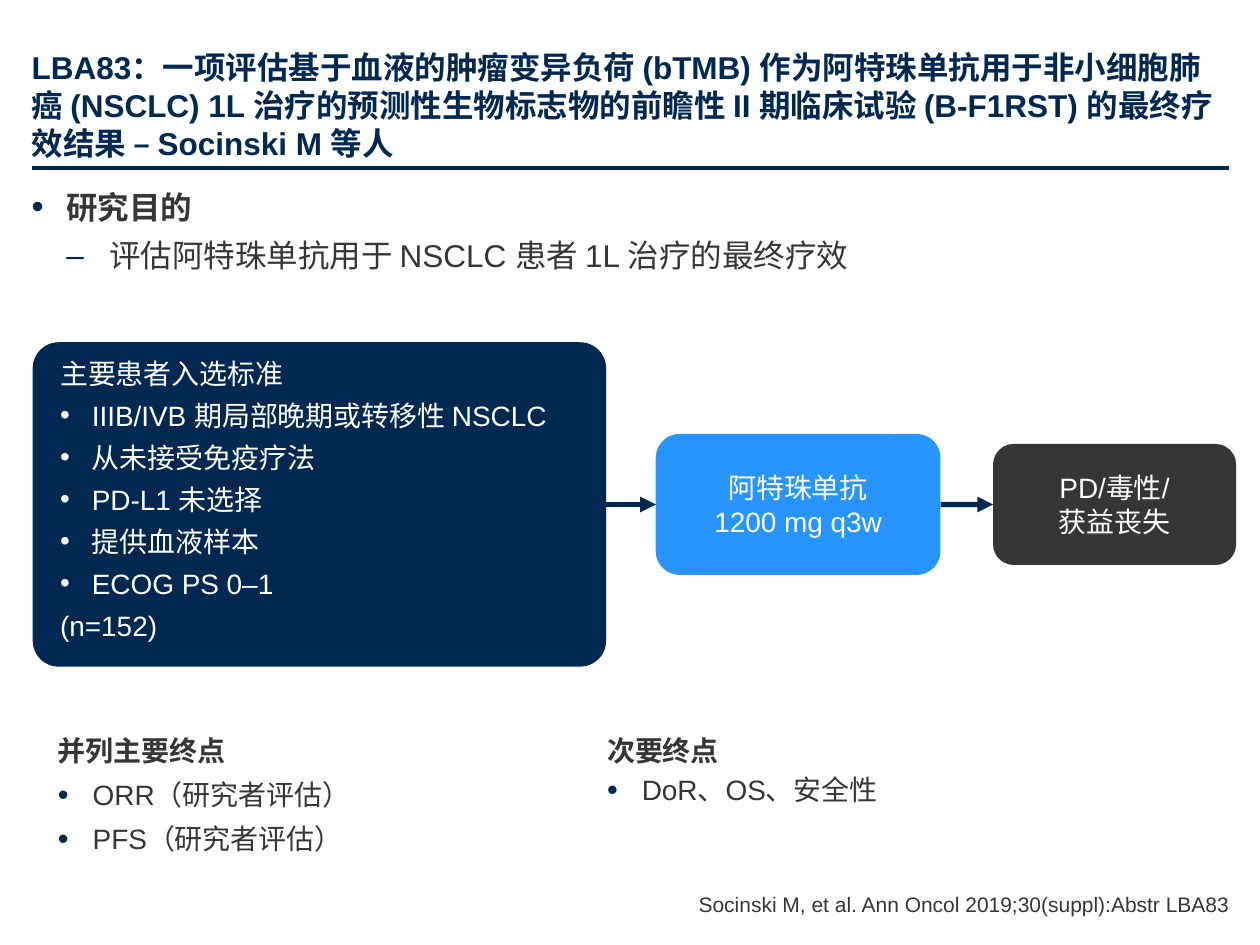
from lxml.etree import SubElement as Sub
from pptx import Presentation
from pptx.dml.color import RGBColor as RGB
from pptx.enum.shapes import MSO_CONNECTOR as LINK, MSO_SHAPE as FORM
from pptx.enum.text import MSO_ANCHOR as ANCHOR, PP_ALIGN as ALIGN
from pptx.oxml.ns import qn
from pptx.util import Cm, Pt

NAVY, BLUE, GREY, WHITE = "002850", "2894FF", "363636", "FFFFFF"


def tint(code):
    return RGB.from_string(code)


def write(shape, rows, size, color, frame=None, **fmt):
    """Fill a shape; each row is text, bold, bullet mark, left, hang and paragraph format."""
    body = shape.text_frame
    look = {"word_wrap": True, "margin_left": 0, "margin_right": 0,
            "margin_top": Cm(0.13), "margin_bottom": Cm(0.13),
            "vertical_anchor": ANCHOR.TOP}
    for key, val in (look | (frame or {})).items():
        setattr(body, key, val)
    for num, (text, bold, mark, left, hang, own) in enumerate(rows):
        para = body.add_paragraph() if num else body.paragraphs[0]
        para.text = text
        for key, val in ({"alignment": ALIGN.LEFT} | fmt | own).items():
            setattr(para, key, val)
        for run in para.runs:
            for key, val in {"name": "Arial", "size": Pt(size), "bold": bold}.items():
                setattr(run.font, key, val)
            run.font.color.rgb = tint(color)
        if mark:
            prop = para._p.get_or_add_pPr()
            prop.set("marL", str(Cm(left)))
            prop.set("indent", str(-Cm(hang)))
            hue = WHITE if color == WHITE else NAVY
            Sub(Sub(prop, qn("a:buClr")), qn("a:srgbClr"), val=hue)
            if mark == "•" and color != WHITE:
                Sub(prop, qn("a:buSzPct"), val="110000")
            Sub(prop, qn("a:buFont"), typeface="Arial")
            Sub(prop, qn("a:buChar"), char=mark)


deck = Presentation()
deck.slide_width, deck.slide_height = Cm(25.4), Cm(19.05)
slide = deck.slides.add_slide(deck.slide_layouts[6])
draw = slide.shapes

# Title and rule
title = draw.add_textbox(Cm(0.64), Cm(0.64), Cm(24.13), Cm(2.62))
write(title, [("LBA83：一项评估基于血液的肿瘤变异负荷 (bTMB) 作为阿特珠单抗用于非小细胞肺癌 "
               "(NSCLC) 1L 治疗的预测性生物标志物的前瞻性 II 期临床试验 (B-F1RST) "
               "的最终疗效结果 – Socinski M 等人", True, "", 0, 0, {})],
      18, NAVY, {"vertical_anchor": ANCHOR.BOTTOM, "margin_bottom": 0})
rule = draw.add_connector(LINK.STRAIGHT, Cm(0.64), Cm(3.38), Cm(24.77), Cm(3.38))

# Study aim
aim = draw.add_textbox(Cm(0.64), Cm(3.66), Cm(24.13), Cm(14.76))
write(aim, [("研究目的", True, "•", 0.7, 0.7, {}),
            ("评估阿特珠单抗用于 NSCLC 患者 1L 治疗的最终疗效", False, "–", 1.56, 0.86, {})],
      18, GREY, space_after=Pt(6))

# Study flow boxes, all centred on one line
mid = 10.17
boxes = []
for left, wide, high, bend, fill in [(0.66, 11.56, 6.54, 0.08, NAVY),
                                     (13.22, 5.74, 2.84, 0.17, BLUE),
                                     (20.02, 4.9, 2.44, 0.17, GREY)]:
    box = draw.add_shape(FORM.ROUNDED_RECTANGLE, Cm(left), Cm(mid - high / 2),
                         Cm(wide), Cm(high))
    box.adjustments[0] = bend
    box.shadow.inherit = False
    box.fill.solid()
    box.fill.fore_color.rgb = tint(fill)
    box.line.fill.background()
    boxes.append(box)

sides = {"margin_left": Cm(0.4), "margin_right": Cm(0.25)}
needs = ["IIIB/IVB 期局部晚期或转移性 NSCLC", "从未接受免疫疗法", "PD-L1 未选择",
         "提供血液样本", "ECOG PS 0–1"]
write(boxes[0], [("主要患者入选标准", False, "", 0, 0, {}),
                 *[(need, False, "•", 0.64, 0.64, {}) for need in needs],
                 ("(n=152)", False, "", 0, 0, {})],
      16, WHITE, sides, space_after=Pt(4.8))
for box, text in zip(boxes[1:], ["阿特珠单抗\n1200 mg q3w", "PD/毒性/\n获益丧失"]):
    write(box, [(text, False, "", 0, 0, {})], 16, WHITE,
          {"vertical_anchor": ANCHOR.MIDDLE, "margin_top": 0, "margin_bottom": 0},
          alignment=ALIGN.CENTER)

# Arrows between neighbours
arrows = []
for start, end in zip(boxes, boxes[1:]):
    arrow = draw.add_connector(LINK.STRAIGHT, 0, 0, 0, 0)
    arrow.begin_connect(start, 3)
    arrow.end_connect(end, 1)
    arrows.append(arrow)
for link, width in [(rule, 2.25), *[(arrow, 3) for arrow in arrows]]:
    link.line.color.rgb = tint(NAVY)
    link.line.width = Pt(width)
    if link in arrows:
        Sub(link.line._get_or_add_ln(), qn("a:tailEnd"), type="triangle")
    Sub(link._element.spPr, qn("a:effectLst"))

# Endpoints
for left, head, items, gap in [
        (1.17, "并列主要终点", ["ORR（研究者评估）", "PFS（研究者评估）"], 6),
        (12.24, "次要终点", ["DoR、OS、安全性"], 3.2)]:
    note = draw.add_textbox(Cm(left), Cm(14.66), Cm(11.86), Cm(2.16))
    write(note, [(head, True, "", 0, 0, {}),
                 *[(item, False, "•", 0.7, 0.7, {}) for item in items]],
          16, GREY, space_after=Pt(gap))

# Reference
cite = draw.add_textbox(Cm(14), Cm(17.98), Cm(10.79), Cm(0.51))
write(cite, [("Socinski M, et al. Ann Oncol 2019;30(suppl):Abstr LBA83", False, "", 0, 0, {})],
      12, GREY, {"vertical_anchor": ANCHOR.BOTTOM, "margin_top": 0, "margin_bottom": 0},
      alignment=ALIGN.RIGHT)

deck.save("out.pptx")
